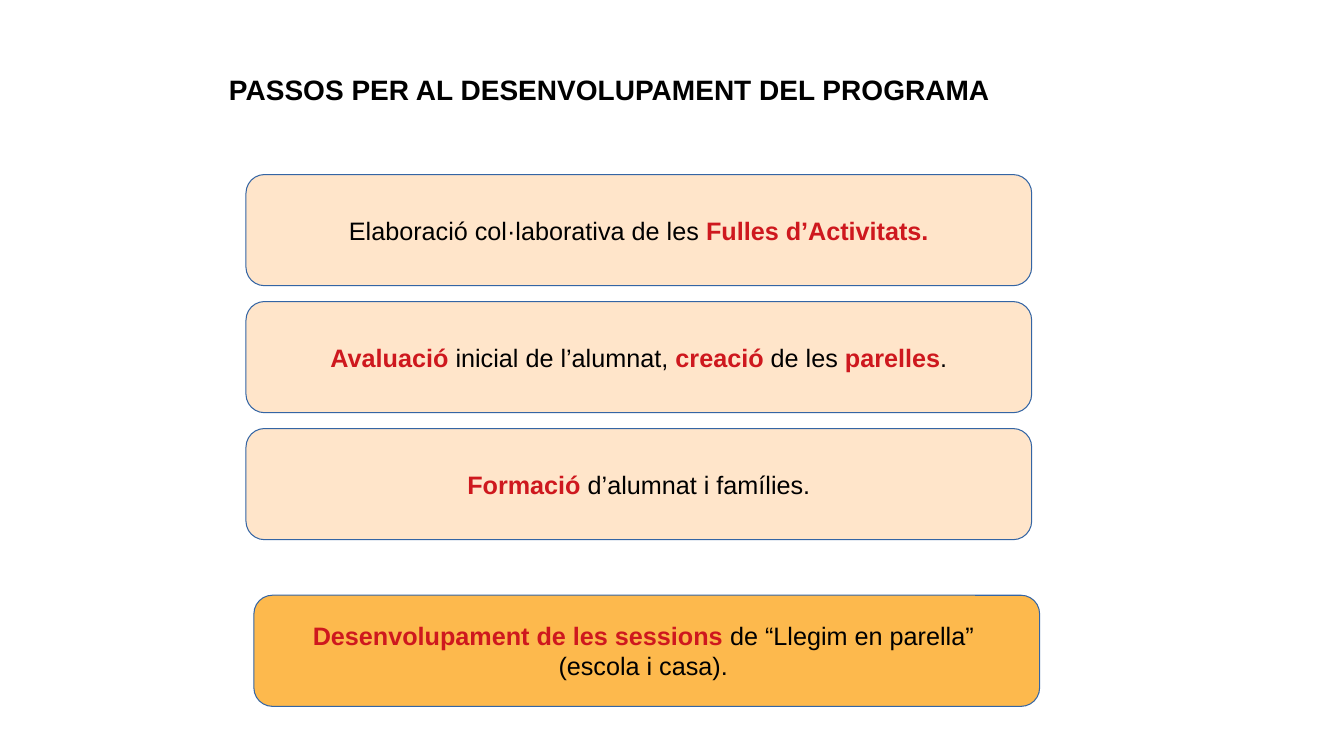
from dataclasses import dataclass

from pptx import Presentation
from pptx.dml.color import RGBColor
from pptx.enum.shapes import MSO_SHAPE
from pptx.enum.text import MSO_ANCHOR, PP_ALIGN
from pptx.util import Cm, Pt

ROUNDED = MSO_SHAPE.ROUNDED_RECTANGLE
CENTER = PP_ALIGN.CENTER
MIDDLE = MSO_ANCHOR.MIDDLE
TOP = MSO_ANCHOR.TOP


@dataclass(frozen=True)
class Theme:
    font: str = "Arial"
    title_size: Pt = Pt(20)
    step_size: Pt = Pt(18)
    border_width: Pt = Pt(0.75)
    ink: RGBColor = RGBColor(0x00, 0x00, 0x00)
    accent: RGBColor = RGBColor(0xCE, 0x18, 0x1E)
    border: RGBColor = RGBColor(0x34, 0x65, 0xA4)
    preparation: RGBColor = RGBColor(0xFF, 0xE5, 0xCA)
    sessions: RGBColor = RGBColor(0xFD, 0xB9, 0x4D)


@dataclass(frozen=True)
class Box:
    left: float
    top: float
    width: float
    height: float

    def lengths(self):
        return Cm(self.left), Cm(self.top), Cm(self.width), Cm(self.height)


THEME = Theme()
TITLE = "PASSOS PER AL DESENVOLUPAMENT DEL PROGRAMA"
PREPARATION_STEPS = [
    [("Elaboració col·laborativa de les ", False), ("Fulles d’Activitats.", True)],
    [
        ("Avaluació", True),
        (" inicial de l’alumnat, ", False),
        ("creació", True),
        (" de les ", False),
        ("parelles", True),
        (".", False),
    ],
    [("Formació", True), (" d’alumnat i famílies.", False)],
]
SESSIONS_LINES = [
    [("Desenvolupament de les sessions", True), (" de “Llegim en parella” ", False)],
    [("(escola i casa). ", False)],
]


def add_run(paragraph, text, size, color, bold):
    run = paragraph.add_run()
    run.text = text
    run.font.name = THEME.font
    run.font.size = size
    run.font.bold = bold
    run.font.color.rgb = color


def add_title(slide, box):
    frame = slide.shapes.add_textbox(*box.lengths()).text_frame
    frame.word_wrap = True
    frame.vertical_anchor = TOP
    heading = frame.paragraphs[0]
    heading.alignment = CENTER
    add_run(heading, TITLE, THEME.title_size, THEME.ink, True)


def add_step(slide, box, lines, fill):
    step = slide.shapes.add_shape(ROUNDED, *box.lengths())
    step.shadow.inherit = False
    step.fill.solid()
    step.fill.fore_color.rgb = fill
    step.line.color.rgb = THEME.border
    step.line.width = THEME.border_width
    frame = step.text_frame
    frame.word_wrap = False
    frame.vertical_anchor = MIDDLE
    for index, line in enumerate(lines):
        paragraph = frame.add_paragraph() if index else frame.paragraphs[0]
        paragraph.alignment = CENTER
        for text, stressed in line:
            color = THEME.accent if stressed else THEME.ink
            add_run(paragraph, text, THEME.step_size, color, stressed)


def add_preparation(slide, box, gap):
    count = len(PREPARATION_STEPS)
    height = (box.height - gap * (count - 1)) / count
    for index, line in enumerate(PREPARATION_STEPS):
        top = box.top + index * (height + gap)
        step_box = Box(box.left, top, box.width, height)
        add_step(slide, step_box, [line], THEME.preparation)


def main():
    deck = Presentation()
    deck.slide_width = Cm(33.87)
    deck.slide_height = Cm(19.05)
    slide = deck.slides.add_slide(deck.slide_layouts[6])
    add_title(slide, Box(1.88, 1.7, 26.95, 3.66))
    add_preparation(slide, Box(6.2, 4.4, 19.8, 9.2), gap=0.4)
    add_step(slide, Box(6.4, 15, 19.8, 2.8), SESSIONS_LINES, THEME.sessions)
    deck.save("out.pptx")


if __name__ == "__main__":
    main()
